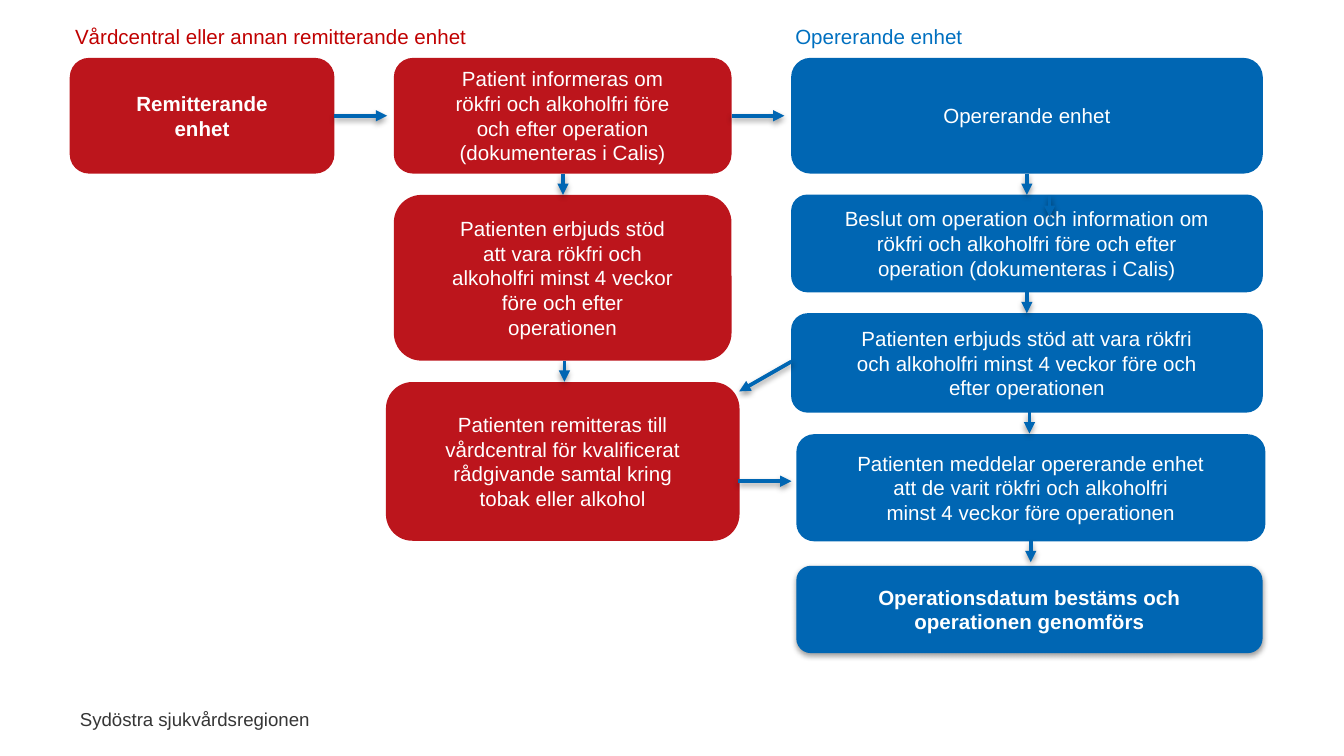
"""Build a flow chart of the care path from referring unit to operating unit."""
import dataclasses

import lxml.etree
import pptx
import pptx.dml.color
import pptx.enum.shapes
import pptx.enum.text
import pptx.oxml
import pptx.oxml.ns
import pptx.util

Pt = pptx.util.Pt
Align = pptx.enum.text.PP_ALIGN


@dataclasses.dataclass(frozen=True)
class Theme:
    font: str = "Arial"
    red: str = "BC151C"
    blue: str = "0066B3"
    red_heading: str = "C00000"
    blue_heading: str = "0070C0"
    footer: str = "363636"
    white: str = "FFFFFF"
    body_size: float = 11
    footer_size: float = 10


theme = Theme()


def write_text(shape, text, color, size, align, bold=False):
    para = shape.text_frame.paragraphs[0]
    para.text = text
    para.alignment = align
    para.font.name = theme.font
    para.font.size = Pt(size)
    para.font.bold = bold
    para.font.color.rgb = pptx.dml.color.RGBColor.from_string(color)


def add_shadow(shape):
    shape.element.spPr.append(pptx.oxml.parse_xml(
        f'<a:effectLst {pptx.oxml.ns.nsdecls("a")}>'
        '<a:outerShdw blurRad="40000" dist="20000" dir="5400000" rotWithShape="0">'
        '<a:srgbClr val="000000"><a:alpha val="38000"/></a:srgbClr>'
        '</a:outerShdw></a:effectLst>'))


deck = pptx.Presentation()
deck.slide_width = Pt(720)
deck.slide_height = Pt(405)
page = deck.slides.add_slide(deck.slide_layouts[6])

labels = [
    ("Vårdcentral eller annan remitterande enhet", 33.1, 9.4, 287, 34,
     theme.red_heading, theme.body_size, Align.LEFT, True),
    ("Opererande enhet", 419, 9.4, 128, 34,
     theme.blue_heading, theme.body_size, Align.LEFT, True),
    ("Sydöstra sjukvårdsregionen", 34.6, 375.8, 138.2, 19.4,
     theme.footer, theme.footer_size, Align.RIGHT, False),
]
for text, left, top, width, height, color, size, align, wrap in labels:
    label = page.shapes.add_textbox(Pt(left), Pt(top), Pt(width), Pt(height))
    label.text_frame.word_wrap = wrap
    write_text(label, text, color, size, align)

support = "Patienten erbjuds stöd att vara rökfri och alkoholfri minst 4 veckor före och efter operationen"
steps = [
    ("Remitterande enhet", 37.4, 31, 141.8, 62, theme.red, True, False),
    ("Patient informeras om rökfri och alkoholfri före och efter operation "
     "(dokumenteras i Calis)", 211, 31, 180.9, 62, theme.red, False, False),
    (support, 211, 104.4, 180.9, 88.8, theme.red, False, False),
    ("Patienten remitteras till vårdcentral för kvalificerat rådgivande samtal "
     "kring tobak eller alkohol", 206.8, 204.7, 189.4, 85, theme.red, False, False),
    ("Opererande enhet", 423.8, 31, 252.7, 62, theme.blue, False, False),
    ("Beslut om operation och information om rökfri och alkoholfri före och efter "
     "operation (dokumenteras i Calis)", 423.8, 104.2, 252.7, 52.4, theme.blue, False, False),
    (support, 423.8, 167.8, 252.7, 53.3, theme.blue, False, False),
    ("Patienten meddelar opererande enhet att de varit rökfri och alkoholfri\v"
     "minst 4 veckor före operationen", 426.6, 232.6, 251.3, 57.4, theme.blue, False, False),
    ("Operationsdatum bestäms och operationen genomförs",
     426.6, 303.1, 249.8, 46.8, theme.blue, True, True),
]
for text, left, top, width, height, color, bold, shadowed in steps:
    box = page.shapes.add_shape(
        pptx.enum.shapes.MSO_SHAPE.ROUNDED_RECTANGLE, Pt(left), Pt(top), Pt(width), Pt(height))
    box.fill.solid()
    box.fill.fore_color.rgb = pptx.dml.color.RGBColor.from_string(color)
    box.line.fill.background()
    if shadowed:
        add_shadow(box)
    else:
        box.shadow.inherit = False
    frame = box.text_frame
    frame.word_wrap = True
    frame.vertical_anchor = pptx.enum.text.MSO_ANCHOR.MIDDLE
    frame.margin_left = frame.margin_right = Pt(26)
    write_text(box, text, theme.white, theme.body_size, Align.CENTER, bold)

arrows = [
    (179.2, 62, 207.4, 62),
    (392, 62, 420.2, 62),
    (395.6, 257.8, 424, 257.8),
    (424, 193.7, 396, 209.7),
    (301.6, 93, 301.6, 104.4),
    (302.4, 193.4, 302.4, 204.5),
    (550.1, 93, 550.1, 104.4),
    (550.1, 156.6, 550.1, 167.8),
    (551.5, 221, 551.5, 232.2),
    (552.2, 290, 552.2, 301.2),
    (562.3, 105, 562.3, 116.2),
]
for start_x, start_y, end_x, end_y in arrows:
    arrow = page.shapes.add_connector(
        pptx.enum.shapes.MSO_CONNECTOR.STRAIGHT, Pt(start_x), Pt(start_y), Pt(end_x), Pt(end_y))
    arrow.line.color.rgb = pptx.dml.color.RGBColor.from_string(theme.blue)
    arrow.line.width = Pt(2)
    outline = arrow.element.spPr.find(pptx.oxml.ns.qn("a:ln"))
    lxml.etree.SubElement(outline, pptx.oxml.ns.qn("a:tailEnd"), type="triangle")
    add_shadow(arrow)

deck.save("out.pptx")
